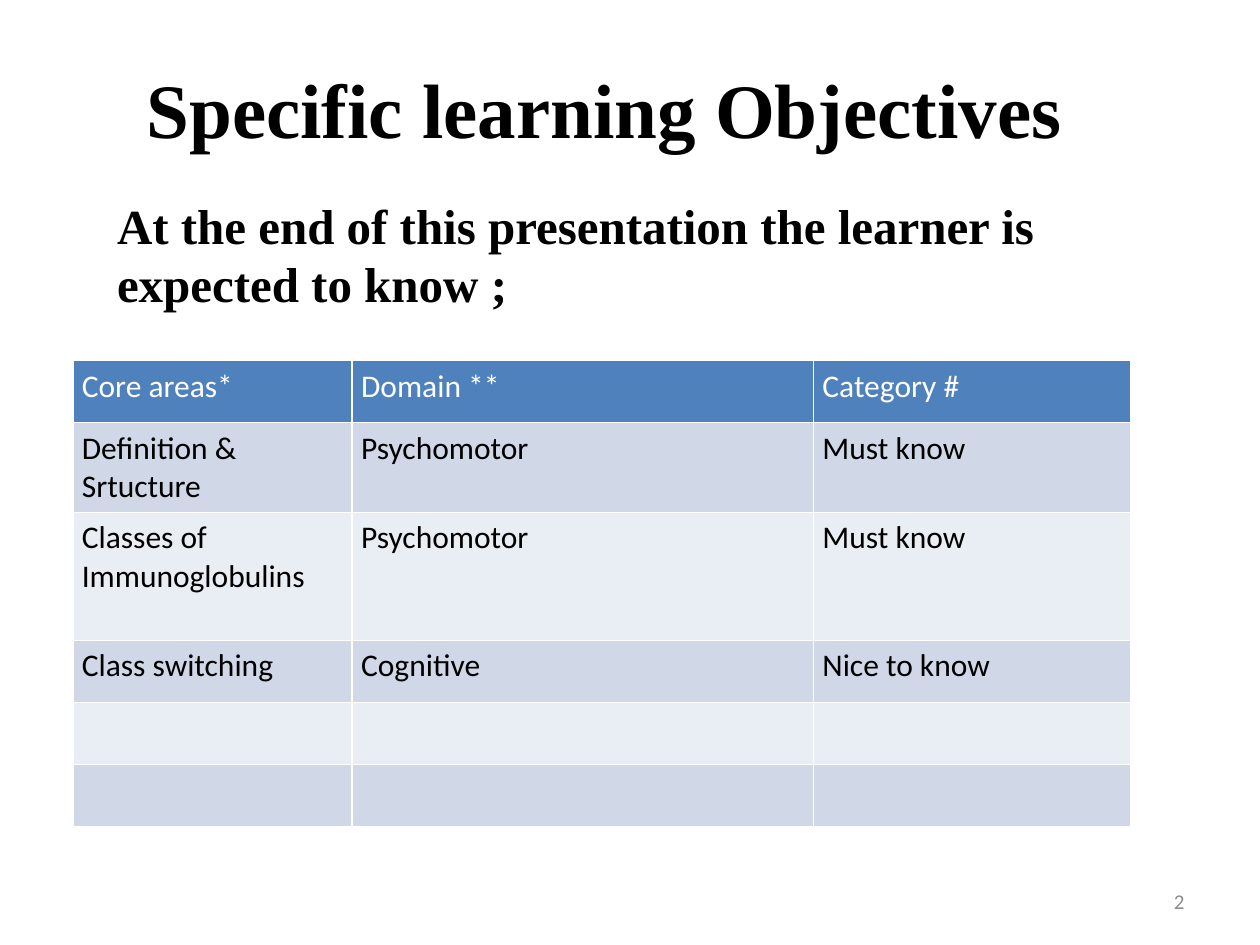
from pptx import Presentation
from pptx.dml.color import RGBColor
from pptx.enum.text import MSO_ANCHOR, PP_ALIGN
from pptx.util import Cm, Pt

BLACK = RGBColor(0x00, 0x00, 0x00)
WHITE = RGBColor(0xFF, 0xFF, 0xFF)
GREY = RGBColor(0x8C, 0x8C, 0x8C)
HEADER_BLUE = RGBColor(0x4F, 0x81, 0xBD)
BANDS = (RGBColor(0xE9, 0xED, 0xF4), RGBColor(0xD0, 0xD8, 0xE8))

HEADING = "Specific learning Objectives"
INTRODUCTION = "At the end of this presentation the learner is expected to know ;"
PAGE_NUMBER = "2"
OBJECTIVES = [
    ("Core areas*", "Domain **", "Category #"),
    ("Definition & Srtucture", "Psychomotor", "Must know"),
    ("Classes of Immunoglobulins", "Psychomotor", "Must know"),
    ("Class switching", "Cognitive", "Nice to know"),
    ("", "", ""),
    ("", "", ""),
]
COLUMN_WIDTHS = (5.63, 9.3, 6.39)
ROW_HEIGHTS = (1.25, 1.8, 2.58, 1.25, 1.25, 1.25)


def place(shape, left, top, width, height):
    shape.left, shape.top = Cm(left), Cm(top)
    shape.width, shape.height = Cm(width), Cm(height)


def write(frame, text, font_name, size, color, bold=False, align=PP_ALIGN.LEFT):
    frame.word_wrap = True
    frame.text = text
    paragraph = frame.paragraphs[0]
    paragraph.alignment = align
    font = paragraph.font
    if paragraph.runs:
        font = paragraph.runs[0].font
    font.name = font_name
    font.size = Pt(size)
    font.bold = bold
    font.color.rgb = color


def add_objectives(slide):
    table = slide.shapes.add_table(
        len(OBJECTIVES), len(COLUMN_WIDTHS), Cm(1.47), Cm(7.27),
        Cm(sum(COLUMN_WIDTHS)), Cm(sum(ROW_HEIGHTS)),
    ).table
    for column, width in zip(table.columns, COLUMN_WIDTHS):
        column.width = Cm(width)
    for index, (row, height, texts) in enumerate(
        zip(table.rows, ROW_HEIGHTS, OBJECTIVES)
    ):
        row.height = Cm(height)
        for cell, text in zip(row.cells, texts):
            cell.margin_left = cell.margin_right = Cm(0.18)
            cell.margin_top = cell.margin_bottom = Cm(0.13)
            cell.fill.solid()
            cell.fill.fore_color.rgb = BANDS[index % 2] if index else HEADER_BLUE
            write(cell.text_frame, text, "Calibri", 18, BLACK if index else WHITE)


def main():
    presentation = Presentation()
    presentation.slide_width, presentation.slide_height = Cm(25.4), Cm(19.05)
    slide = presentation.slides.add_slide(presentation.slide_layouts[5])

    heading = slide.shapes.title
    place(heading, 2.54, 0.64, 19.3, 3.07)
    heading.text_frame.vertical_anchor = MSO_ANCHOR.MIDDLE
    write(heading.text_frame, HEADING, "Times New Roman", 44, BLACK, True,
          PP_ALIGN.CENTER)

    add_objectives(slide)

    introduction = slide.shapes.add_textbox(Cm(2.11), Cm(3.81), Cm(20.42), Cm(2.64))
    write(introduction.text_frame, INTRODUCTION, "Times New Roman", 28, BLACK, True)

    page_number = slide.shapes.add_textbox(Cm(18.2), Cm(17.66), Cm(5.93), Cm(1.01))
    page_number.text_frame.vertical_anchor = MSO_ANCHOR.MIDDLE
    write(page_number.text_frame, PAGE_NUMBER, "Calibri", 12, GREY,
          align=PP_ALIGN.RIGHT)

    presentation.save("out.pptx")


if __name__ == "__main__":
    main()
